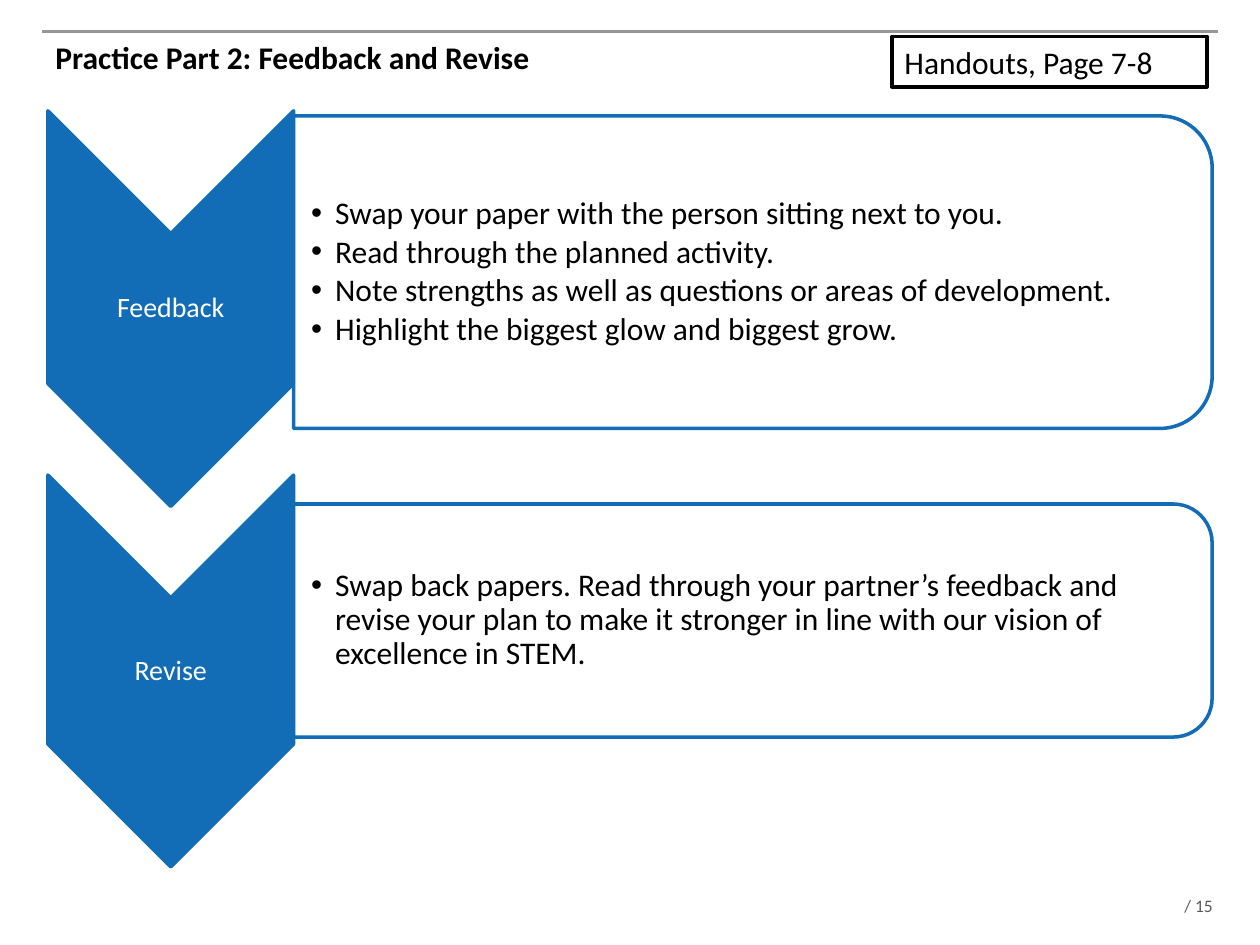
import pptx
import pptx.dml.color
import pptx.enum.shapes
import pptx.enum.text
import pptx.oxml.ns
import pptx.util
from lxml import etree
from pptx.util import Inches

BLUE = pptx.dml.color.RGBColor(0x12, 0x6D, 0xB6)
WHITE = pptx.dml.color.RGBColor(0xFF, 0xFF, 0xFF)
BLACK = pptx.dml.color.RGBColor(0, 0, 0)
RULE_GREY = pptx.dml.color.RGBColor(0x96, 0x96, 0x96)
TEXT_GREY = pptx.dml.color.RGBColor(0x59, 0x59, 0x59)
SHAPES = pptx.enum.shapes.MSO_SHAPE
ANCHOR = pptx.enum.text.MSO_ANCHOR
ALIGN = pptx.enum.text.PP_ALIGN
FEEDBACK_ITEMS = [
    "Swap your paper with the person sitting next to you.",
    "Read through the planned activity.",
    "Note strengths as well as questions or areas of development.",
    "Highlight the biggest glow and biggest grow.",
]
REVISE_ITEMS = [
    "Swap back papers. Read through your partner’s feedback and revise your plan "
    "to make it stronger in line with our vision of excellence in STEM.",
]


def place(shape, left, top, width, height):
    """Move and size a shape."""
    shape.left, shape.top, shape.width, shape.height = left, top, width, height


def set_frame(frame, anchor, left=Inches(0.1), other=Inches(0.05), wrap=True):
    """Set the wrapping, anchor and insets of a text frame."""
    frame.auto_size = pptx.enum.text.MSO_AUTO_SIZE.NONE
    frame.word_wrap = wrap
    frame.vertical_anchor = anchor
    frame.margin_left = frame.margin_right = left
    frame.margin_top = frame.margin_bottom = other


def format_text(frame, size, color, align=ALIGN.LEFT, bold=False):
    """Format every run of a text frame."""
    for para in frame.paragraphs:
        para.alignment = align
        for span in para.runs:
            span.font.name = "Calibri"
            span.font.size = pptx.util.Pt(size)
            span.font.bold = bold
            span.font.color.rgb = color


def add_filled_shape(page, kind, box, fill, line):
    """Add a flat preset shape with a two-point outline."""
    shape = page.shapes.add_shape(kind, *box)
    shape.shadow.inherit = False
    shape.fill.solid()
    shape.fill.fore_color.rgb = fill
    shape.line.color.rgb = line
    shape.line.width = pptx.util.Pt(2)
    return shape


def add_turned_shape(page, kind, left, top, width, height, fill):
    """Add a shape turned a quarter clockwise that covers the given box."""
    shift = (width - height) // 2
    box = (left + shift, top - shift, height, width)
    shape = add_filled_shape(page, kind, box, fill, BLUE)
    shape.rotation = 90
    return shape


def add_header(page):
    """Add the top rule, the title and the handout tag."""
    rule = page.shapes.add_connector(
        pptx.enum.shapes.MSO_CONNECTOR.STRAIGHT,
        Inches(0.33), Inches(0.25), Inches(9.67), Inches(0.25))
    rule.line.color.rgb = RULE_GREY
    rule.line.width = pptx.util.Pt(2)
    etree.SubElement(rule.element.spPr, pptx.oxml.ns.qn("a:effectLst"))

    title = page.shapes.title
    place(title, Inches(0.34), Inches(0.25), Inches(9.32), Inches(0.92))
    title.text_frame.text = "Practice Part 2: Feedback and Revise"
    set_frame(title.text_frame, ANCHOR.TOP)
    format_text(title.text_frame, 18, BLACK, bold=True)

    box = (Inches(7.08), Inches(0.29), Inches(2.5), Inches(0.4))
    tag = add_filled_shape(page, SHAPES.RECTANGLE, box, WHITE, BLACK)
    tag.text_frame.text = "Handouts, Page 7-8"
    set_frame(tag.text_frame, ANCHOR.TOP)
    format_text(tag.text_frame, 18, BLACK)


def fill_list(body, items):
    """Write the bulleted items into a body placeholder."""
    frame = body.text_frame
    frame.text = "\n".join(items)
    set_frame(frame, ANCHOR.MIDDLE, Inches(0.14), Inches(0.01))
    frame.margin_right = Inches(0.01)
    for para in frame.paragraphs:
        properties = para._p.get_or_add_pPr()
        properties.set("marL", str(Inches(0.19)))
        properties.set("indent", str(-Inches(0.19)))
        para.line_spacing = 0.9
        para.space_before = pptx.util.Pt(0)
        para.space_after = pptx.util.Pt(2.7)
    format_text(frame, 18, BLACK)


def add_step(page, body, top, height, panel_top, panel_height, label, items):
    """Add a downward chevron with its label and a rounded panel with its list."""
    left, width, panel_width = Inches(0.38), Inches(1.95), Inches(7.29)
    add_turned_shape(page, SHAPES.CHEVRON, left, top, width, height, BLUE)

    label_height = Inches(1.18)
    caption = page.shapes.add_textbox(
        left, top + (height - label_height) // 2, width, label_height)
    caption.text_frame.text = label
    set_frame(caption.text_frame, ANCHOR.MIDDLE, Inches(0.01), Inches(0.01))
    caption.text_frame.paragraphs[0].line_spacing = 0.9
    format_text(caption.text_frame, 16, WHITE, ALIGN.CENTER)

    panel = add_turned_shape(page, SHAPES.ROUND_2_SAME_RECTANGLE, left + width,
                             panel_top, panel_width, panel_height, WHITE)
    color = panel.element.spPr.find(".//" + pptx.oxml.ns.qn("a:srgbClr"))
    etree.SubElement(color, pptx.oxml.ns.qn("a:alpha"), val="90000")

    inset = Inches(0.1)
    place(body, left + width, panel_top + inset,
          panel_width - inset, panel_height - 2 * inset)
    fill_list(body, items)
    panel.element.addnext(body.element)


def add_page_count(page):
    """Add the page count at the lower right."""
    count = page.shapes.add_textbox(
        Inches(9.4), Inches(7.1), Inches(0.3), Inches(0.17))
    count.text_frame.text = "/ 15"
    set_frame(count.text_frame, ANCHOR.TOP, 0, 0, wrap=False)
    format_text(count.text_frame, 10, TEXT_GREY)


def main():
    """Build the slide and save it."""
    deck = pptx.Presentation()
    deck.slide_width, deck.slide_height = Inches(10), Inches(7.5)
    page = deck.slides.add_slide(deck.slide_layouts.get_by_name("Two Content"))
    feedback_body, revise_body = page.placeholders[1], page.placeholders[2]
    add_page_count(page)
    add_header(page)
    add_step(page, feedback_body, Inches(0.88), Inches(3.14),
             Inches(0.92), Inches(2.48), "Feedback", FEEDBACK_ITEMS)
    add_step(page, revise_body, Inches(3.77), Inches(3.11),
             Inches(4), Inches(1.85), "Revise", REVISE_ITEMS)
    deck.save("out.pptx")


if __name__ == "__main__":
    main()
